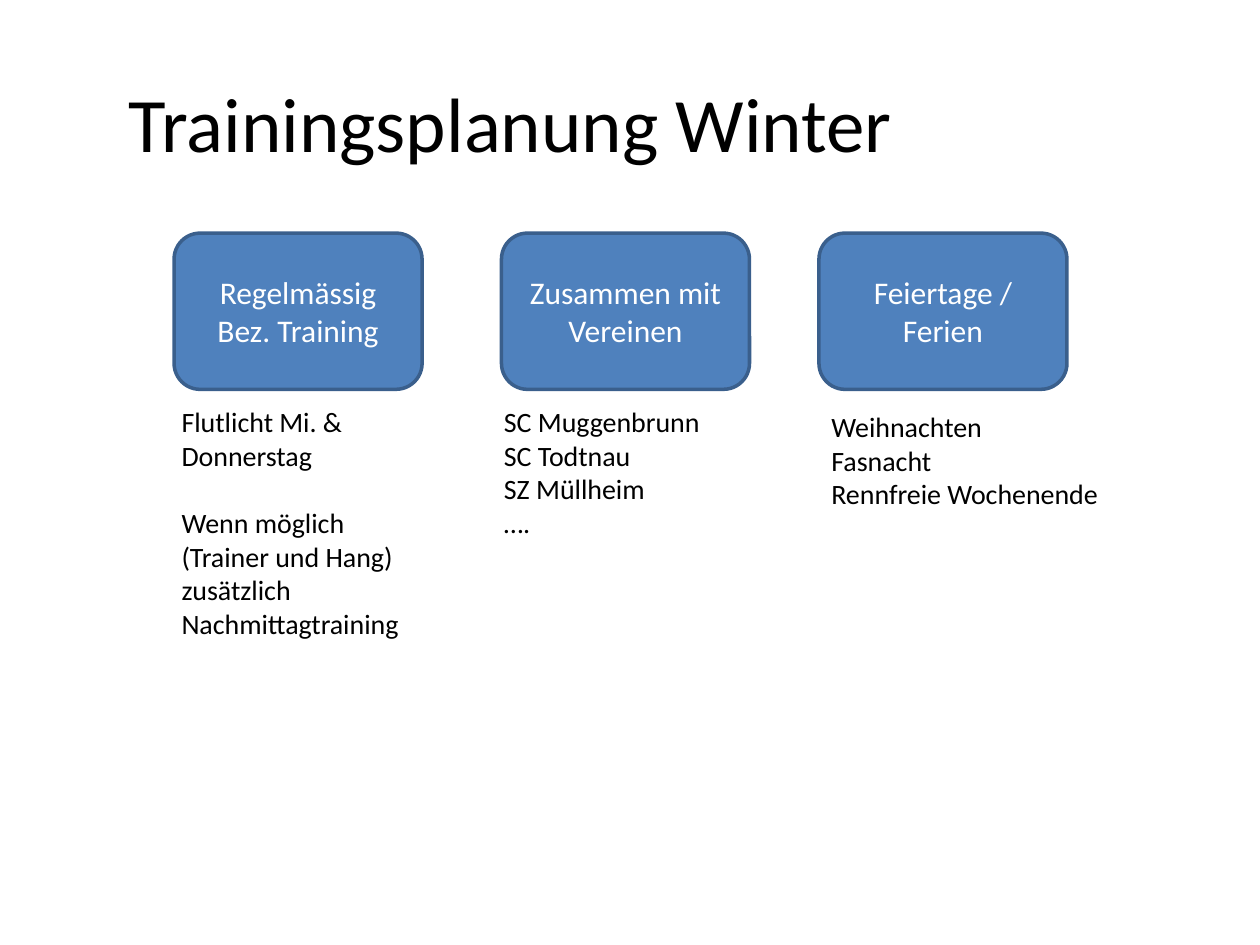
from pptx import Presentation
from pptx.dml.color import RGBColor
from pptx.enum.shapes import MSO_SHAPE
from pptx.enum.text import MSO_ANCHOR, PP_ALIGN
from pptx.util import Cm, Pt

ROUNDED = MSO_SHAPE.ROUNDED_RECTANGLE
MIDDLE, TOP = MSO_ANCHOR.MIDDLE, MSO_ANCHOR.TOP
LEFT, CENTER = PP_ALIGN.LEFT, PP_ALIGN.CENTER
TITLE_ONLY = 5

TITLE_FONT = {"name": "Calibri", "size": Pt(44)}
HEADING_FONT = {"name": "Calibri", "size": Pt(18)}
DETAIL_FONT = {"name": "Calibri", "size": Pt(16)}
LINE_HEIGHT = Pt(19.5)  # one line of detail text

# Heading lines, then groups of detail lines; offsets and width in cm
COLUMNS = [
    {"left": 3.51, "heading": ["Regelmässig", "Bez. Training"],
     "details": [["Flutlicht Mi. & Donnerstag"],
                 ["Wenn möglich (Trainer und Hang) zusätzlich Nachmittagtraining"]],
     "offset": (-0.1, 3.33), "detail_width": 5.2},
    {"left": 10.11, "heading": ["Zusammen mit Vereinen"],
     "details": [["SC Muggenbrunn", "SC Todtnau", "SZ Müllheim", "…."]],
     "offset": (-0.2, 3.33), "detail_width": 5.2},
    {"left": 16.51, "heading": ["Feiertage / Ferien"],
     "details": [["Weihnachten", "Fasnacht", "Rennfreie Wochenende"]],
     "offset": (0, 3.43), "detail_width": 6.2},
]


def color(hex_string):
    return RGBColor.from_string(hex_string)


def write(frame, groups, font_format, font_color, align, anchor):
    """Write groups of paragraphs, one line of space between groups."""
    frame.word_wrap = True
    frame.vertical_anchor = anchor
    first = True
    for group in groups:
        for index, line in enumerate(group):
            paragraph = frame.paragraphs[0] if first else frame.add_paragraph()
            if index == 0 and not first:
                paragraph.space_before = LINE_HEIGHT
            first = False
            paragraph.text = line
            paragraph.alignment = align
            for key, value in font_format.items():
                setattr(paragraph.font, key, value)
            paragraph.font.color.rgb = color(font_color)


def add_title(slide, text, left, top, width, height):
    title = slide.shapes.title
    title.left, title.top = Cm(left), Cm(top)
    title.width, title.height = Cm(width), Cm(height)
    write(title.text_frame, [[text]], TITLE_FONT, "000000", LEFT, MIDDLE)


def add_column(slide, column, left, top, width, height):
    # Heading box
    heading = slide.shapes.add_shape(ROUNDED, Cm(left), Cm(top), Cm(width), Cm(height))
    heading.shadow.inherit = False
    heading.fill.solid()
    heading.fill.fore_color.rgb = color("4F81BD")
    heading.line.color.rgb = color("3A5F8C")
    heading.line.width = Pt(2)
    write(heading.text_frame, [column["heading"]], HEADING_FONT, "FFFFFF", CENTER, MIDDLE)

    # Details below the heading
    dx, dy = column["offset"]
    details = slide.shapes.add_textbox(
        Cm(left + dx), Cm(top + dy), Cm(column["detail_width"]), Cm(8.4))
    write(details.text_frame, column["details"], DETAIL_FONT, "000000", LEFT, TOP)


def main():
    presentation = Presentation()
    presentation.slide_width, presentation.slide_height = Cm(25.4), Cm(19.05)
    slide = presentation.slides.add_slide(presentation.slide_layouts[TITLE_ONLY])
    add_title(slide, "Trainingsplanung Winter", 2.34, 0.86, 22.43, 3.18)
    for column in COLUMNS:
        add_column(slide, column, column["left"], 4.7, 5, 3.15)
    presentation.save("out.pptx")


if __name__ == "__main__":
    main()
